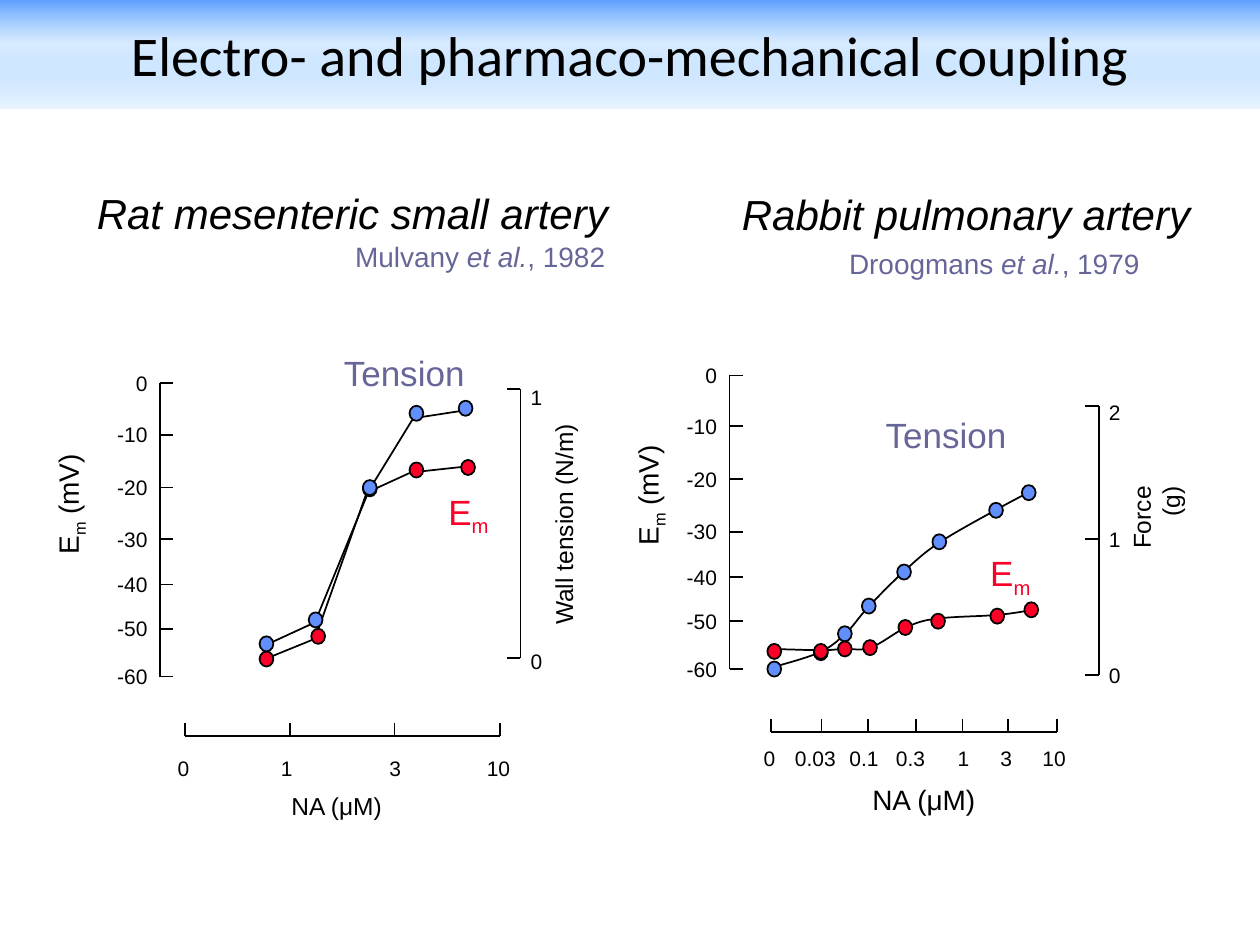
"""Build a slide comparing electro- and pharmaco-mechanical coupling in two arteries."""
from dataclasses import dataclass

from lxml import etree
from pptx import Presentation
from pptx.dml.color import RGBColor
from pptx.enum.shapes import MSO_CONNECTOR, MSO_SHAPE
from pptx.enum.text import MSO_ANCHOR, MSO_AUTO_SIZE, PP_ALIGN
from pptx.oxml import parse_xml
from pptx.oxml.ns import nsdecls, qn
from pptx.util import Inches, Pt

LEFT, RIGHT, CENTER = PP_ALIGN.LEFT, PP_ALIGN.RIGHT, PP_ALIGN.CENTER
STRAIGHT, OVAL = MSO_CONNECTOR.STRAIGHT, MSO_SHAPE.OVAL
MIDDLE, FIT, FIXED = MSO_ANCHOR.MIDDLE, MSO_AUTO_SIZE.SHAPE_TO_FIT_TEXT, MSO_AUTO_SIZE.NONE

COLORS = {"ink": "000000", "em": "FC0128", "tension": "618FFD", "accent": "666699"}
BANNER_STOPS = ((0, "5E9EFF", 100), (40, "85C2FF", 31), (100, "EBF5FF", 100))
SLIDE_WIDTH, SLIDE_HEIGHT = Inches(10), Inches(7.5)
COLUMN, ROW = SLIDE_WIDTH / 100, SLIDE_HEIGHT / 75
MARKER_WIDTH, MARKER_HEIGHT, TICK_LENGTH, LABEL_HEIGHT = 1.1, 1.2, 1.05, 3
CHARACTER_WIDTHS = {".": 0.46, "-": 0.55}
CURVE_STEPS = 8

Point = tuple[float, float]


@dataclass
class Caption:
    left: float
    top: float
    width: float
    height: float
    runs: tuple[tuple[str, str], ...]
    size: int
    color: str = "ink"
    align: PP_ALIGN = LEFT
    rotation: int = 0
    wrap: bool = False


@dataclass
class Tick:
    position: float
    text: str
    label_position: float


@dataclass
class Series:
    color: str
    line: list[Point]
    markers: list[Point]
    smooth: bool = False


@dataclass
class Panel:
    em_column: float
    em_rows: list[float]
    tension_column: float
    tension_ticks: list[Tick]
    dose_row: float
    dose_label_row: float
    dose_ticks: list[Tick]
    series: list[Series]
    captions: list[Caption]


EM = (("E", ""), ("m", "subscript"))
EM_TITLE = EM + ((" (mV)", ""),)
RAT = Panel(
    12.7, [30.4, 34.5, 38.7, 42.8, 46.4, 49.9, 53.7],
    41.3, [Tick(30.9, "1", 31.5), Tick(52.2, "0", 52.5)],
    58.4, 61,
    [Tick(14.7, "0", 14.55), Tick(23, "1", 22.75), Tick(31.3, "3", 31.35), Tick(39.7, "10", 39.55)],
    [Series("em", [(21.3, 52.2), (25, 50.7), (29.1, 39.1), (32.6, 37.5), (37.2, 37)],
            [(21.15, 52.3), (25.25, 50.5), (29.35, 38.8), (33.05, 37.3), (37.15, 37.1)]),
     Series("tension", [(21.3, 51.1), (25, 49.4), (29.3, 38.9), (32.8, 33.2), (36.7, 32.6)],
            [(21.15, 51.1), (25.05, 49.2), (29.35, 38.7), (33.05, 32.8), (36.95, 32.4)])],
    [Caption(6.7, 14.4, 42.6, 5, (("Rat mesenteric small artery", "italic"),), 24),
     Caption(27.2, 18.5, 21.9, 3.7, (("Mulvany ", ""), ("et al.", "italic"), (", 1982", "")), 16, "accent"),
     Caption(26.3, 27.4, 11.9, 4.3, (("Tension", ""),), 20, "accent"),
     Caption(34.6, 38.4, 5.4, 4.3, EM, 20, "em"),
     Caption(0.3, 38.3, 10.2, 3.7, EM_TITLE, 16, align=RIGHT, rotation=270),
     Caption(35.7, 40, 18, 3.3, (("Wall tension (N/m)", ""),), 14, align=RIGHT, rotation=270),
     Caption(22, 62.3, 9.3, 3.3, (("NA (μM)", ""),), 14, align=RIGHT)])
RABBIT = Panel(
    57.9, [29.8, 33.8, 38, 42.2, 45.8, 49.3, 53.1],
    87.2, [Tick(32.2, "2", 32.7), Tick(42.8, "1", 42.8), Tick(53.6, "0", 53.6)],
    58.1, 60.2,
    [Tick(61.2, "0", 61.05), Tick(65.2, "0.03", 64.7), Tick(68.9, "0.1", 68.55),
     Tick(72.7, "0.3", 72.25), Tick(76.4, "1", 76.45), Tick(80, "3", 79.85), Tick(83.9, "10", 83.65)],
    [Series("tension", [(61.2, 53), (65, 51.8), (67.1, 50.3), (68.9, 48.2), (71.7, 45.4),
                        (74.5, 43.1), (79, 40.5), (81.8, 39)],
            [(61.45, 53.1), (65.15, 51.8), (67.05, 50.3), (68.95, 48.1), (71.75, 45.4),
             (74.55, 43), (79.05, 40.5), (81.65, 39.1)], True),
     Series("em", [(61.2, 51.5), (65.1, 51.6), (67, 51.5), (69.1, 51.4), (71.9, 49.8),
                   (74.3, 49.1), (79.2, 48.8), (82, 48.4)],
            [(61.45, 51.7), (65.15, 51.7), (67.05, 51.5), (69.05, 51.4), (71.85, 49.8),
             (74.45, 49.3), (79.15, 48.9), (81.85, 48.4)], True)],
    [Caption(57.9, 14.5, 42.7, 5, (("Rabbit pulmonary artery", "italic"),), 24, wrap=True),
     Caption(66.4, 19.1, 25.1, 3.7, (("Droogmans ", ""), ("et al.", "italic"), (", 1979", "")), 16, "accent"),
     Caption(69.3, 32.3, 11.9, 4.3, (("Tension", ""),), 20, "accent"),
     Caption(77.6, 43.3, 5.4, 4.3, EM, 20, "em"),
     Caption(46.3, 37.6, 10.2, 3.7, EM_TITLE, 16, align=RIGHT, rotation=270),
     Caption(86.05, 40.45, 9, 3.3, (("Force (g)", ""),), 14, align=RIGHT, rotation=270, wrap=True),
     Caption(68.1, 61.6, 10.3, 3.7, (("NA (μM)", ""),), 16, align=RIGHT)])


def rgb(name: str) -> RGBColor:
    return RGBColor.from_string(COLORS[name])


def place(column: float, row: float) -> tuple[int, int]:
    return round(column * COLUMN), round(row * ROW)


def draw_banner(slide, text: str) -> None:
    title = slide.shapes.title
    title.left, title.top = place(0, 0)
    title.width, title.height = place(100, 8.6)
    title.fill.gradient()
    title.fill.gradient_angle = 270
    stops = title.fill._xPr.find(qn("a:gradFill")).find(qn("a:gsLst"))
    for stop in list(stops):
        stops.remove(stop)
    for position, color, alpha in BANNER_STOPS:
        stops.append(parse_xml(
            f'<a:gs {nsdecls("a")} pos="{position * 1000}"><a:srgbClr val="{color}">'
            f'<a:alpha val="{alpha * 1000}"/></a:srgbClr></a:gs>'))
    title.text_frame.text = text
    title.text_frame.vertical_anchor = MIDDLE
    paragraph = title.text_frame.paragraphs[0]
    paragraph.alignment = CENTER
    paragraph.font.name, paragraph.font.size = "Calibri", Pt(32)
    paragraph.font.color.rgb = rgb("ink")


def draw_caption(slide, caption: Caption) -> None:
    shape = slide.shapes.add_textbox(
        *place(caption.left, caption.top), *place(caption.width, caption.height))
    shape.rotation = caption.rotation
    frame = shape.text_frame
    frame.word_wrap = caption.wrap
    frame.auto_size = FIXED if caption.wrap else FIT
    paragraph = frame.paragraphs[0]
    paragraph.alignment = caption.align
    paragraph.font.name, paragraph.font.size = "Arial", Pt(caption.size)
    paragraph.font.color.rgb = rgb(caption.color)
    for text, style in caption.runs:
        run = paragraph.add_run()
        run.text = text
        if style == "italic":
            run.font.italic = True
        elif style == "subscript":
            run._r.get_or_add_rPr().set("baseline", "-25000")


def label_width(text: str) -> float:
    return 2 + sum(CHARACTER_WIDTHS.get(character, 0.93) for character in text)


def draw_label(slide, text: str, left: float, top: float) -> None:
    draw_caption(slide, Caption(left, top, label_width(text), LABEL_HEIGHT, ((text, ""),), 12, align=RIGHT))


def draw_line(slide, start: Point, end: Point) -> None:
    line = slide.shapes.add_connector(STRAIGHT, *place(*start), *place(*end))
    line.line.color.rgb, line.line.width = rgb("ink"), Pt(1)
    etree.SubElement(line._element.spPr, qn("a:effectLst"))


def draw_vertical_axis(slide, column: float, rows: list[float], tick: float) -> None:
    draw_line(slide, (column, rows[0]), (column, rows[-1]))
    for row in rows:
        draw_line(slide, (column, row), (column + tick, row))


def draw_axes(slide, panel: Panel) -> None:
    draw_vertical_axis(slide, panel.em_column, panel.em_rows, TICK_LENGTH)
    for index, row in enumerate(panel.em_rows):
        text = str(-10 * index)
        draw_label(slide, text, panel.em_column - label_width(text), row - LABEL_HEIGHT / 2)
    draw_vertical_axis(slide, panel.tension_column, [tick.position for tick in panel.tension_ticks], -TICK_LENGTH)
    for tick in panel.tension_ticks:
        draw_label(slide, tick.text, panel.tension_column - 0.2, tick.label_position - LABEL_HEIGHT / 2)
    row = panel.dose_row
    draw_line(slide, (panel.dose_ticks[0].position, row), (panel.dose_ticks[-1].position, row))
    for tick in panel.dose_ticks:
        draw_line(slide, (tick.position, row), (tick.position, row - TICK_LENGTH))
        left = tick.label_position - label_width(tick.text) / 2
        draw_label(slide, tick.text, left, panel.dose_label_row - LABEL_HEIGHT / 2)


def smooth_points(points: list[Point]) -> list[Point]:
    padded = [points[0], *points, points[-1]]
    result = [points[0]]
    for before, start, end, after in zip(padded, padded[1:], padded[2:], padded[3:]):
        for step in range(1, CURVE_STEPS + 1):
            t = step / CURVE_STEPS
            result.append(tuple(
                b + t * (c - a) / 2 + t**2 * (2 * a - 5 * b + 4 * c - d) / 2 + t**3 * (3 * b - a - 3 * c + d) / 2
                for a, b, c, d in zip(before, start, end, after)))
    return result


def draw_curve(slide, series: Series) -> None:
    points = smooth_points(series.line) if series.smooth else series.line
    first, *others = [place(*point) for point in points]
    builder = slide.shapes.build_freeform(*first)
    builder.add_line_segments(others, close=False)
    curve = builder.convert_to_shape()
    curve.shadow.inherit = False
    curve.fill.background()
    curve.line.color.rgb, curve.line.width = rgb("ink"), Pt(1)


def draw_markers(slide, series: Series) -> None:
    for column, row in series.markers:
        marker = slide.shapes.add_shape(
            OVAL, *place(column - MARKER_WIDTH / 2, row - MARKER_HEIGHT / 2), *place(MARKER_WIDTH, MARKER_HEIGHT))
        marker.shadow.inherit = False
        marker.fill.solid()
        marker.fill.fore_color.rgb = rgb(series.color)
        marker.line.color.rgb, marker.line.width = rgb("ink"), Pt(1)


def draw_panel(slide, panel: Panel) -> None:
    draw_axes(slide, panel)
    for draw in (draw_curve, draw_markers):
        for series in panel.series:
            draw(slide, series)
    for caption in panel.captions:
        draw_caption(slide, caption)


def main() -> None:
    presentation = Presentation()
    presentation.slide_width, presentation.slide_height = SLIDE_WIDTH, SLIDE_HEIGHT
    slide = presentation.slides.add_slide(presentation.slide_layouts[5])
    draw_banner(slide, "Electro- and pharmaco-mechanical coupling")
    for panel in (RAT, RABBIT):
        draw_panel(slide, panel)
    presentation.save("out.pptx")


if __name__ == "__main__":
    main()
